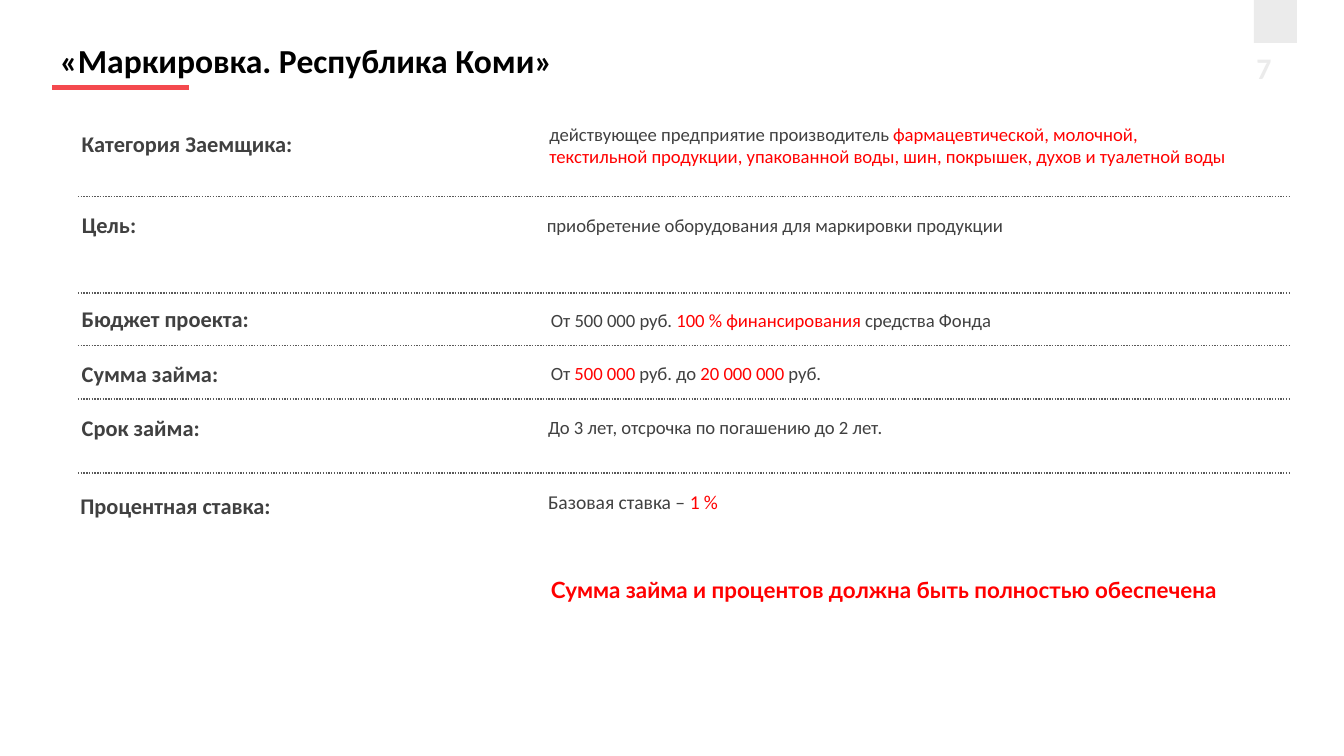
from lxml import etree
from pptx import Presentation
from pptx.dml.color import RGBColor
from pptx.enum.dml import MSO_LINE
from pptx.enum.shapes import MSO_CONNECTOR, MSO_SHAPE
from pptx.enum.text import MSO_ANCHOR
from pptx.oxml.ns import qn
from pptx.util import Inches, Pt

STRAIGHT = MSO_CONNECTOR.STRAIGHT
DOTS = MSO_LINE.ROUND_DOT
RECT = MSO_SHAPE.RECTANGLE
MIDDLE = MSO_ANCHOR.MIDDLE
GREY, RED, CORAL, PALE = "404040", "FF0000", "F4494E", "EBEBEB"

TITLE = " «Маркировка. Республика Коми»"
NOTE = "Сумма займа и процентов должна быть полностью обеспечена"
PAGE = "7"

ROWS = [
    ("Категория Заемщика:", (0.51, 0.92, 2.13, 0.3), (3.99, 0.86, 5.3, 0.44), 10, [
        ("действующее предприятие производитель ", GREY),
        ("фармацевтической, молочной, текстильной продукции, упакованной воды, "
         "шин, покрышек, духов и туалетной воды", RED)]),
    ("Цель:", (0.51, 1.52, 1.81, 0.3), (3.97, 1.36, 5.12, 0.63), 10, [
        ("приобретение оборудования для маркировки продукции", GREY)]),
    ("Бюджет проекта:", (0.51, 2.22, 1.74, 0.3), (4, 2.25, 5.49, 0.27), 10, [
        ("От 500 000 руб. ", GREY), ("100 % финансирования", RED),
        (" средства Фонда", GREY)]),
    ("Сумма займа:", (0.51, 2.63, 1.4, 0.3), (4, 2.64, 2.54, 0.27), 10, [
        ("От ", GREY), ("500 000 ", RED), ("руб. до ", GREY),
        ("20 000 000 ", RED), ("руб.", GREY)]),
    ("Срок займа:", (0.51, 3.03, 1.26, 0.3), (3.98, 3.04, 3.06, 0.27), 10, [
        ("До 3 лет, отсрочка по погашению до 2 лет.", GREY)]),
    ("Процентная ставка:", (0.5, 3.61, 1.95, 0.3), (3.98, 3.59, 5, 0.28), 10.5, [
        ("Базовая ставка – ", GREY), ("1 %", RED)]),
]
RULES = [1.46, 2.18, 2.57, 2.97, 3.52]


def color(code):
    return RGBColor.from_string(code)


def add_text(slide, box, runs, size, bold=False, font="Calibri"):
    shape = slide.shapes.add_textbox(*map(Inches, box))
    frame = shape.text_frame
    frame.word_wrap = True
    frame.vertical_anchor = MIDDLE
    for text, code in runs:
        run = frame.paragraphs[0].add_run()
        run.text = text
        run.font.name = font
        run.font.size = Pt(size)
        run.font.bold = bold
        run.font.color.rgb = color(code)


def add_rule(slide, left, right, top, code, width):
    ends = map(Inches, (left, top, right, top))
    rule = slide.shapes.add_connector(STRAIGHT, *ends)
    rule.line.color.rgb = color(code)
    rule.line.width = Pt(width)
    etree.SubElement(rule._element.spPr, qn("a:effectLst"))
    return rule


def main():
    deck = Presentation()
    deck.slide_width = Inches(10)
    deck.slide_height = deck.slide_width * 9 // 16
    slide = deck.slides.add_slide(deck.slide_layouts[6])

    tab = slide.shapes.add_shape(RECT, *map(Inches, (9.33, 0, 0.32, 0.32)))
    tab.shadow.inherit = False
    tab.fill.solid()
    tab.fill.fore_color.rgb = color(PALE)
    tab.line.fill.background()

    add_text(slide, (9.25, 0.32, 0.4, 0.37), [(PAGE, PALE)], 16, True)
    add_text(slide, (0.29, 0.25, 5.65, 0.4), [(TITLE, "000000")], 18, True)
    add_rule(slide, 0.39, 1.41, 0.65, CORAL, 3)

    for label, place, box, size, runs in ROWS:
        add_text(slide, place, [(label, GREY)], 12, True)
        add_text(slide, box, runs, size)
    for top in RULES:
        add_rule(slide, 0.58, 9.59, top, "595959", 0.75).line.dash_style = DOTS

    add_text(slide, (4, 4.24, 5.88, 0.3), [(NOTE, RED)], 12, True, "Lato")
    deck.save("out.pptx")


if __name__ == "__main__":
    main()
